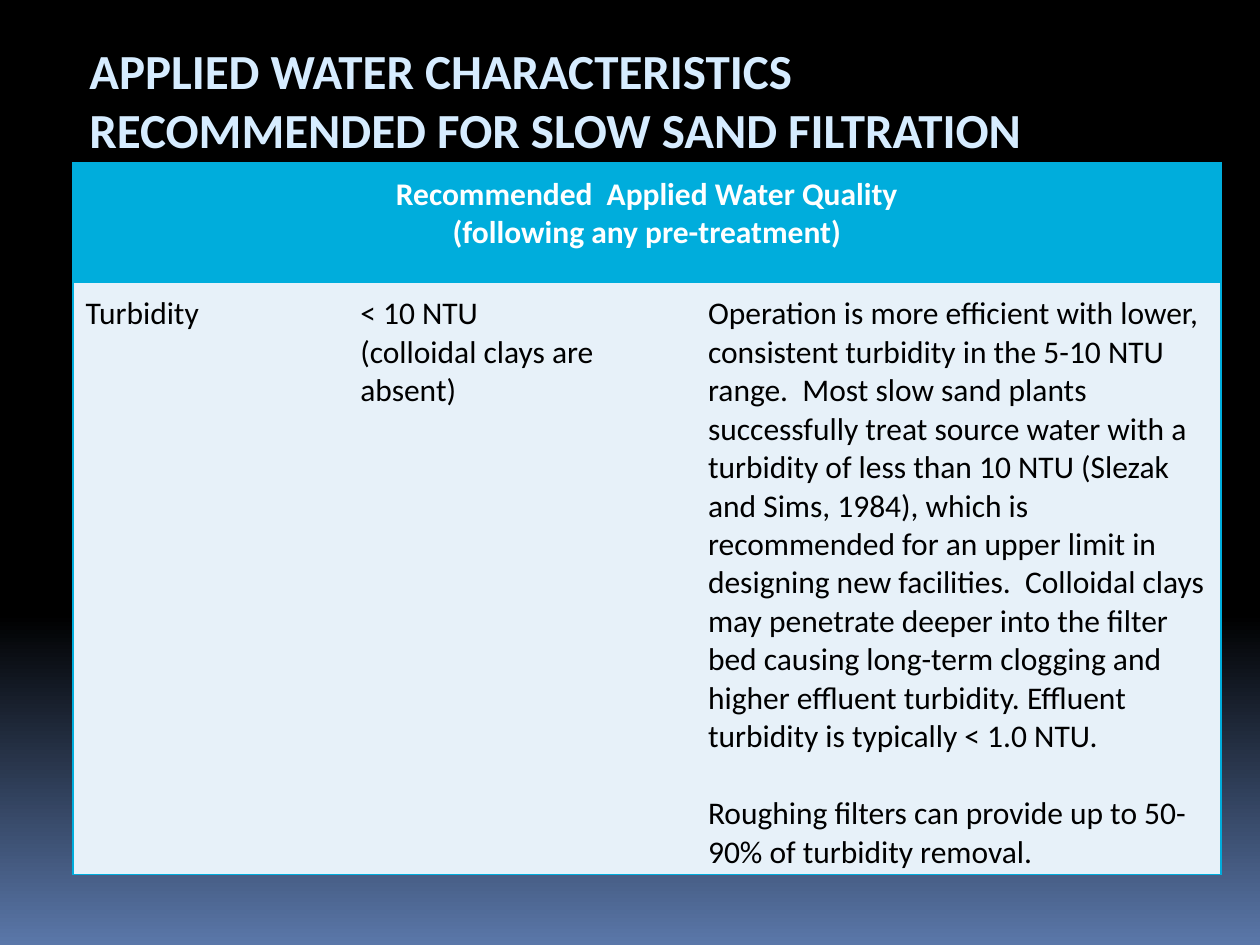
from copy import deepcopy

from pptx import Presentation
from pptx.dml.color import RGBColor
from pptx.enum.text import MSO_ANCHOR, MSO_AUTO_SIZE, PP_ALIGN
from pptx.oxml import parse_xml
from pptx.oxml.ns import nsdecls
from pptx.util import Inches, Pt

BLUE = "00ADDC"
HEADER = "Recommended  Applied Water Quality\n(following any pre-treatment)"
ROW = [
    "Turbidity",
    "< 10 NTU\n(colloidal clays are absent)",
    "Operation is more efficient with lower, consistent turbidity in the 5-10 NTU "
    "range.  Most slow sand plants successfully treat source water with a turbidity "
    "of less than 10 NTU (Slezak and Sims, 1984), which is recommended for an upper "
    "limit in designing new facilities.  Colloidal clays may penetrate deeper into "
    "the filter bed causing long-term clogging and higher effluent turbidity. "
    "Effluent turbidity is typically < 1.0 NTU.\n"
    "Roughing filters can provide up to 50-90% of turbidity removal.",
]


def format_text(text_frame, size, color, bold, alignment):
    for paragraph in text_frame.paragraphs:
        paragraph.alignment = alignment
        paragraph.line_spacing = 1.0
        paragraph.space_before = Pt(0)
        for run in paragraph.runs:
            run.font.name = "Calibri"
            run.font.size = Pt(size)
            run.font.bold = bold
            run.font.color.rgb = RGBColor.from_string(color)


def set_borders(cell, sides):
    """Draw the named sides (letters of LRTB) in blue and hide the others."""
    properties = cell._tc.get_or_add_tcPr()
    for position, side in enumerate("LRTB"):
        fill = "<a:noFill/>"
        if side in sides:
            fill = f'<a:solidFill><a:srgbClr val="{BLUE}"/></a:solidFill>'
        line = parse_xml(f'<a:ln{side} {nsdecls("a")} w="12700">{fill}</a:ln{side}>')
        properties.insert(position, line)


presentation = Presentation()
presentation.slide_width = Inches(10)
presentation.slide_height = Inches(7.5)
slide = presentation.slides.add_slide(presentation.slide_layouts[5])

# Background: black down to 65 %, then fading to blue
background = slide.background.fill
background.gradient()
background.gradient_angle = 270
black, blue = background.gradient_stops
black.color.rgb = RGBColor.from_string("000000")
black.position = 0
blue.color.rgb = RGBColor.from_string("5A77A9")
blue.position = 1
middle = deepcopy(black._gs)
middle.set("pos", "65000")
black._gs.addnext(middle)

# Title
title = slide.shapes.title
title.left, title.top = Inches(0.61), Inches(0.27)
title.width, title.height = Inches(8.38), Inches(1.04)
title.text_frame.text = "APPLIED WATER CHARACTERISTICS\nRECOMMENDED FOR SLOW SAND FILTRATION"
title.text_frame.word_wrap = True
title.text_frame.auto_size = MSO_AUTO_SIZE.NONE
title.text_frame.vertical_anchor = MSO_ANCHOR.TOP
format_text(title.text_frame, 28, "D6ECFF", True, PP_ALIGN.LEFT)

# Table
table = slide.shapes.add_table(
    2, 3, Inches(0.58), Inches(1.29), Inches(9.11), Inches(5.65)
).table
for column, width in zip(table.columns, [2.18, 2.76, 4.17]):
    column.width = Inches(width)
for row, height in zip(table.rows, [0.95, 4.7]):
    row.height = Inches(height)
table.cell(0, 0).merge(table.cell(0, 2))

table.cell(0, 0).text = HEADER
format_text(table.cell(0, 0).text_frame, 18, "FFFFFF", True, PP_ALIGN.CENTER)
for index, text in enumerate(ROW):
    cell = table.cell(1, index)
    cell.text = text
    format_text(cell.text_frame, 18, "000000", False, PP_ALIGN.LEFT)
table.cell(1, 2).text_frame.paragraphs[1].space_before = Pt(22)

for row, fill, borders in zip(
    table.rows, [BLUE, "E7F1F9"], [["LRTB"] * 3, ["LTB", "TB", "RTB"]]
):
    for cell, sides in zip(row.cells, borders):
        cell.fill.solid()
        cell.fill.fore_color.rgb = RGBColor.from_string(fill)
        cell.margin_left = cell.margin_right = cell.margin_top = Inches(0.1)
        cell.margin_bottom = Inches(0.02)
        cell.vertical_anchor = MSO_ANCHOR.TOP
        set_borders(cell, sides)

presentation.save("out.pptx")
